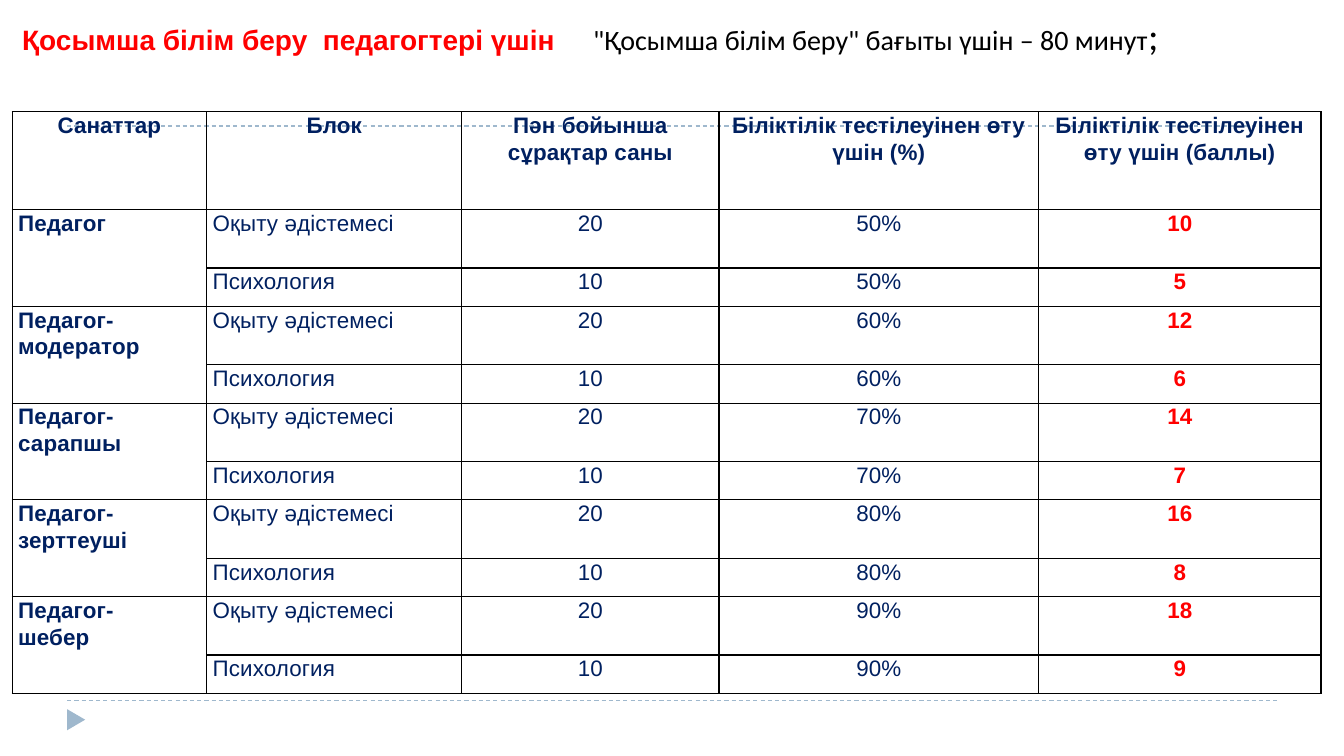
import lxml.etree
import pptx
import pptx.dml.color
import pptx.enum.dml
import pptx.enum.shapes
import pptx.enum.text
import pptx.oxml.ns
import pptx.util

Pt = pptx.util.Pt
ALIGN = pptx.enum.text.PP_ALIGN
qn = pptx.oxml.ns.qn

NAVY, RED, BLACK, PALE_BLUE = "002060", "FF0000", "000000", "9FB8CD"

HEADERS = [
    "Санаттар",
    "Блок",
    "Пән бойынша сұрақтар саны",
    "Біліктілік тестілеуінен өту үшін (%)",
    "Біліктілік тестілеуінен өту үшін (баллы)",
]
BLOCKS = [("Оқыту әдістемесі", 20), ("Психология", 10)]
CATEGORIES = [
    ("Педагог", 50),
    ("Педагог-\nмодератор", 60),
    ("Педагог-\nсарапшы", 70),
    ("Педагог-\nзерттеуші", 80),
    ("Педагог-\nшебер", 90),
]
COLUMN_SHARES = [1.93, 2.53, 2.55, 3.17, 2.8]
HEADER_HEIGHT = 69.84
BLOCK_HEIGHTS = [41.76, 27.36]


def color(hex_string):
    return pptx.dml.color.RGBColor.from_string(hex_string)


def set_font(font, hex_string, **values):
    for name, value in values.items():
        setattr(font, name, value)
    font.color.rgb = color(hex_string)


def add_dashed_rule(slide, left, top, width):
    rule = slide.shapes.add_connector(
        pptx.enum.shapes.MSO_CONNECTOR.STRAIGHT,
        Pt(left), Pt(top), Pt(left + width), Pt(top))
    rule.line.color.rgb = color(PALE_BLUE)
    rule.line.width = Pt(0.75)
    rule.line.dash_style = pptx.enum.dml.MSO_LINE.DASH
    lxml.etree.SubElement(rule._element.spPr, qn("a:effectLst"))


def add_page_marker(slide, left, top, width, height):
    marker = slide.shapes.add_shape(
        pptx.enum.shapes.MSO_SHAPE.ISOSCELES_TRIANGLE,
        Pt(left), Pt(top), Pt(width), Pt(height))
    marker.rotation = 90
    marker.shadow.inherit = False
    marker.fill.solid()
    marker.fill.fore_color.rgb = color(PALE_BLUE)
    marker.line.fill.background()


def add_title(slide, left, top, width, height):
    box = slide.shapes.add_textbox(Pt(left), Pt(top), Pt(width), Pt(height))
    box.text_frame.word_wrap = True
    paragraph = box.text_frame.paragraphs[0]
    tabs = lxml.etree.SubElement(paragraph._p.get_or_add_pPr(), qn("a:tabLst"))
    lxml.etree.SubElement(tabs, qn("a:tab"), pos=str(Pt(408)), algn="l")
    for text, hex_string, name, size, bold in [
        ("Қосымша білім беру  педагогтері үшін\t", RED, "Arial", 20, True),
        ("\"Қосымша білім беру\" бағыты үшін – 80 минут", BLACK, "Calibri", 20, False),
        (";", BLACK, "Calibri", 28, False),
    ]:
        run = paragraph.add_run()
        run.text = text
        set_font(run.font, hex_string, name=name, size=Pt(size), bold=bold)


def add_borders(cell):
    properties = cell._tc.get_or_add_tcPr()
    for side in ("lnL", "lnR", "lnT", "lnB"):
        border = lxml.etree.SubElement(properties, qn(f"a:{side}"), w=str(Pt(1)))
        fill = lxml.etree.SubElement(border, qn("a:solidFill"))
        lxml.etree.SubElement(fill, qn("a:srgbClr"), val=BLACK)


def fill_cell(cell, text, alignment=ALIGN.CENTER, bold=False, hex_string=NAVY):
    cell.text_frame.text = text
    for paragraph in cell.text_frame.paragraphs:
        paragraph.alignment = alignment
        paragraph.line_spacing = 1.07
        for run in paragraph.runs:
            set_font(run.font, hex_string, name="Arial", size=Pt(16), bold=bold)
            if hex_string == NAVY:
                run._r.get_or_add_rPr().set("spc", "10")


def add_score_table(slide, left, top, width):
    heights = [HEADER_HEIGHT] + BLOCK_HEIGHTS * len(CATEGORIES)
    table = slide.shapes.add_table(
        len(heights), len(HEADERS),
        Pt(left), Pt(top), Pt(width), Pt(sum(heights))).table
    table.first_row = table.horz_banding = False
    for column, share in zip(table.columns, COLUMN_SHARES):
        column.width = Pt(width * share / sum(COLUMN_SHARES))
    for row, height in zip(table.rows, heights):
        row.height = Pt(height)
    margins = {"margin_left": 4.32, "margin_right": 4.32,
               "margin_top": 0, "margin_bottom": 0}
    for cell in table.iter_cells():
        for name, value in margins.items():
            setattr(cell, name, Pt(value))
        add_borders(cell)
        cell.fill.background()

    for index, header in enumerate(HEADERS):
        fill_cell(table.cell(0, index), header, bold=True)
    for index, (category, percent) in enumerate(CATEGORIES):
        first = 1 + index * len(BLOCKS)
        table.cell(first, 0).merge(table.cell(first + len(BLOCKS) - 1, 0))
        fill_cell(table.cell(first, 0), category, ALIGN.JUSTIFY, bold=True)
        for row, (block, questions) in enumerate(BLOCKS, first):
            fill_cell(table.cell(row, 1), block, ALIGN.JUSTIFY)
            fill_cell(table.cell(row, 2), str(questions))
            fill_cell(table.cell(row, 3), f"{percent}%")
            fill_cell(table.cell(row, 4), str(questions * percent // 100),
                      bold=True, hex_string=RED)


def main():
    presentation = pptx.Presentation()
    presentation.slide_width = Pt(960)
    presentation.slide_height = Pt(540)
    slide = presentation.slides.add_slide(presentation.slide_layouts[6])
    for top in (500.4, 90):
        add_dashed_rule(slide, 48, top, 864)
    add_page_marker(slide, 46.8, 507.6, 15.12, 12.96)
    add_score_table(slide, 8.64, 79.92, 935)
    add_title(slide, 8.64, 4.32, 838, 74.88)
    presentation.save("out.pptx")


if __name__ == "__main__":
    main()
